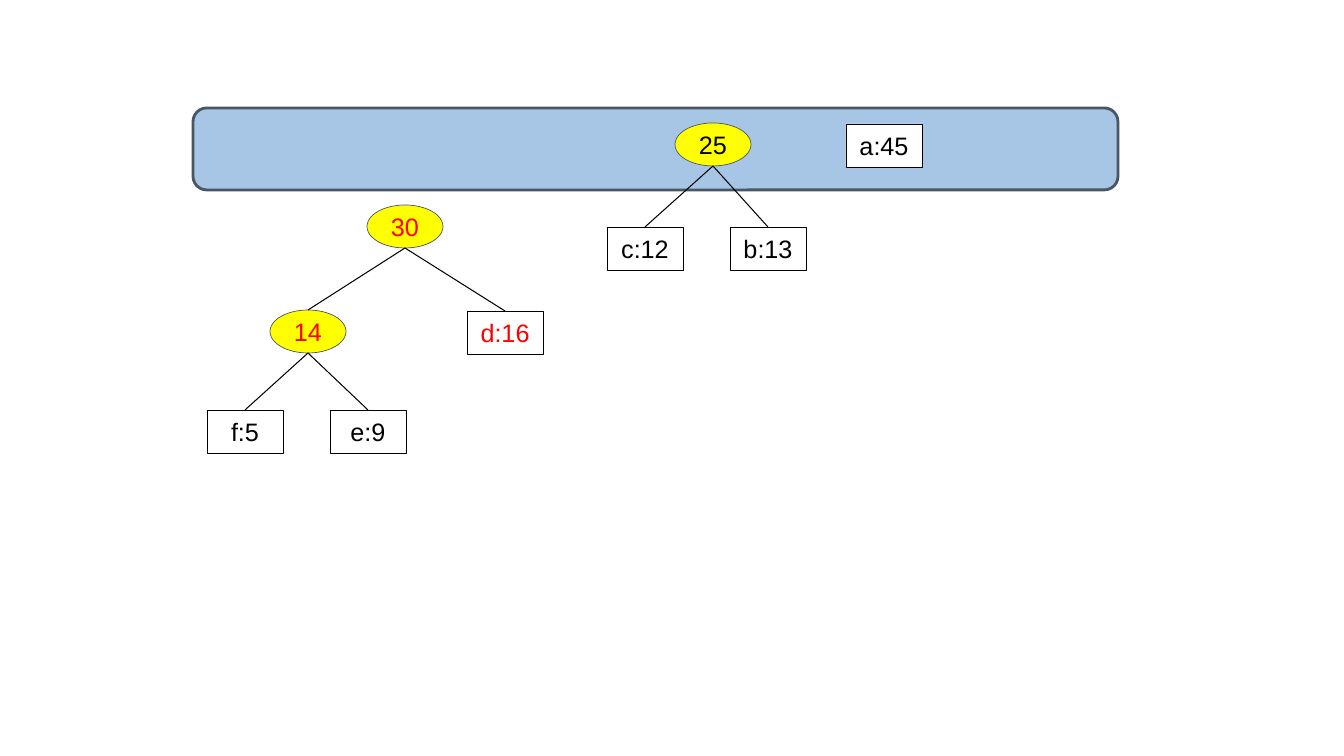
"""Build a slide showing one merge step of a Huffman tree."""
from lxml import etree
from pptx import Presentation
from pptx.dml.color import RGBColor
from pptx.enum.shapes import MSO_CONNECTOR, MSO_SHAPE
from pptx.enum.text import MSO_ANCHOR, PP_ALIGN
from pptx.oxml.ns import qn
from pptx.util import Emu, Pt

RECTANGLE = MSO_SHAPE.RECTANGLE
ELLIPSE = MSO_SHAPE.OVAL
ROUNDED = MSO_SHAPE.ROUNDED_RECTANGLE
STRAIGHT = MSO_CONNECTOR.STRAIGHT
MIDDLE = MSO_ANCHOR.MIDDLE
CENTER = PP_ALIGN.CENTER

BLACK = RGBColor(0x00, 0x00, 0x00)
WHITE = RGBColor(0xFF, 0xFF, 0xFF)
RED = RGBColor(0xFF, 0x00, 0x00)
YELLOW = RGBColor(0xFF, 0xFF, 0x00)
BLUE = RGBColor(0xA7, 0xC6, 0xE5)
SLATE = RGBColor(0x49, 0x57, 0x64)

PX_PER_INCH = 100.8
NODE_WIDTH, NODE_HEIGHT = 76, 43
TOP_SITE = 0

LEAVES = [
    ("f:5", 207, 410, BLACK),
    ("e:9", 330, 410, BLACK),
    ("c:12", 607, 227, BLACK),
    ("b:13", 730, 227, BLACK),
    ("d:16", 467, 311, RED),
    ("a:45", 846, 124, BLACK),
]
SUMS = [
    ("14", 270, 310, RED, ("f:5", "e:9")),
    ("25", 675, 123, BLACK, ("c:12", "b:13")),
    ("30", 367, 205, RED, ("14", "d:16")),
]


def px(length):
    return Emu(round(length * 914400 / PX_PER_INCH))


def add_box(slide, kind, left, top, width, height, fill, outline, weight):
    box = slide.shapes.add_shape(kind, px(left), px(top), px(width), px(height))
    box.shadow.inherit = False
    box.fill.solid()
    box.fill.fore_color.rgb = fill
    box.line.color.rgb = outline
    box.line.width = Pt(weight)
    return box


def add_node(slide, kind, label, left, top, color, fill, outline):
    node = add_box(slide, kind, left, top, NODE_WIDTH, NODE_HEIGHT, fill, outline, 0.5)
    frame = node.text_frame
    frame.margin_left = frame.margin_right = frame.margin_top = frame.margin_bottom = 0
    frame.vertical_anchor = MIDDLE
    paragraph = frame.paragraphs[0]
    paragraph.text = label
    paragraph.alignment = CENTER
    paragraph.font.name = "Arial"
    paragraph.font.size = Pt(18)
    paragraph.font.color.rgb = color
    return node


def add_branch(slide, parent, child):
    x = parent.left + parent.width // 2
    y = parent.top + parent.height
    branch = slide.shapes.add_connector(STRAIGHT, x, y, x, y)
    branch.end_connect(child, TOP_SITE)
    branch.line.color.rgb = BLACK
    branch.line.width = Pt(0.75)
    etree.SubElement(branch._element.spPr, qn("a:effectLst"))


def main():
    deck = Presentation()
    deck.slide_width, deck.slide_height = px(1344), px(756)
    slide = deck.slides.add_slide(deck.slide_layouts[6])

    add_box(slide, ROUNDED, 193, 108, 925, 82, BLUE, SLATE, 2)
    nodes = {}
    for label, left, top, color in LEAVES:
        nodes[label] = add_node(slide, RECTANGLE, label, left, top, color, WHITE, BLACK)
    for label, left, top, color, children in SUMS:
        nodes[label] = add_node(slide, ELLIPSE, label, left, top, color, YELLOW, SLATE)
        for child in children:
            add_branch(slide, nodes[label], nodes[child])

    deck.save("out.pptx")


if __name__ == "__main__":
    main()
